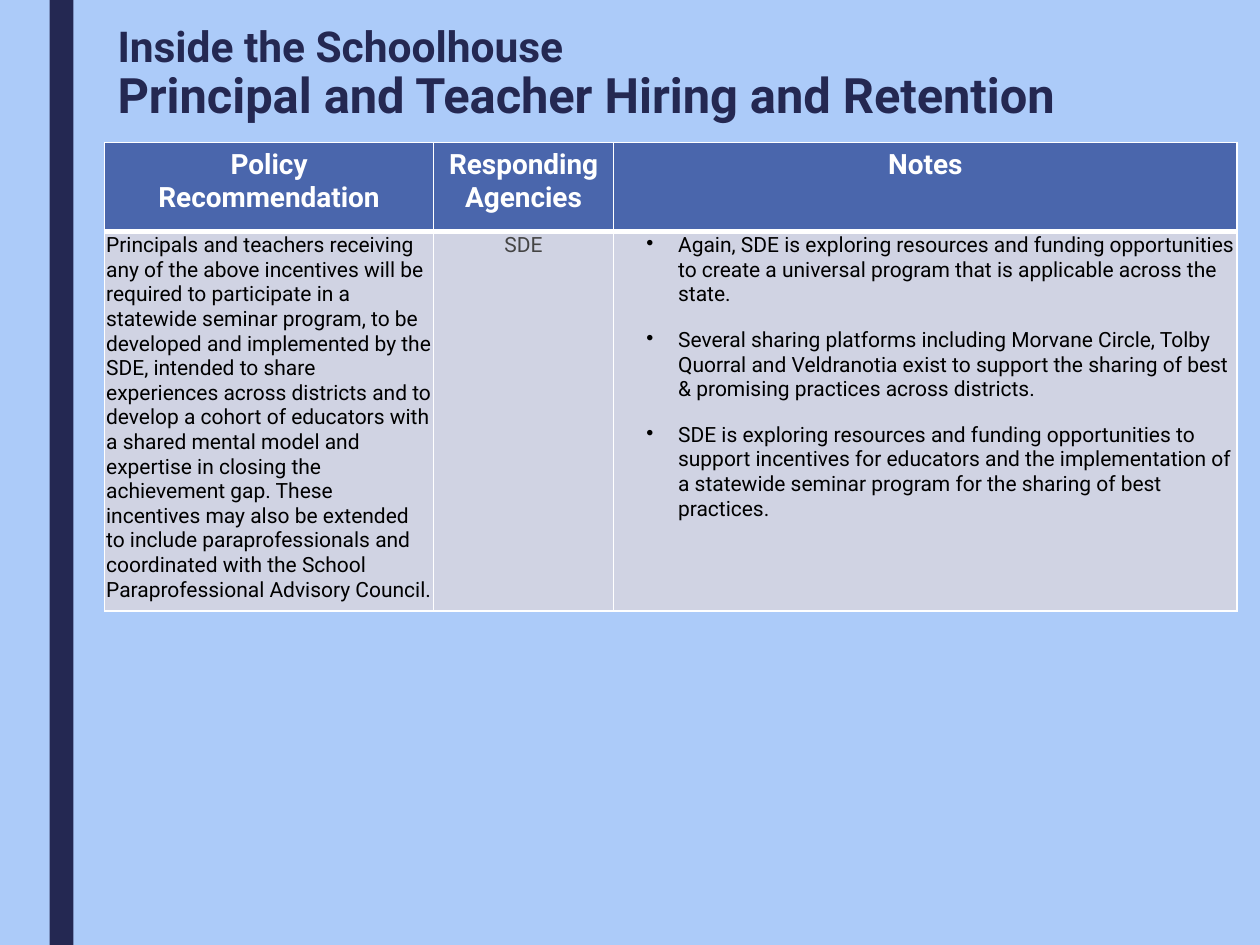
from lxml import etree
from pptx import Presentation
from pptx.dml.color import RGBColor
from pptx.enum.shapes import MSO_SHAPE
from pptx.enum.text import PP_ALIGN
from pptx.oxml.ns import qn
from pptx.util import Cm, Pt

RECTANGLE = MSO_SHAPE.RECTANGLE
LEFT, CENTER = PP_ALIGN.LEFT, PP_ALIGN.CENTER

FONT = "Roboto"
COLORS = {
    "background": "ACCBF9",
    "navy": "242852",
    "header": "4A66AC",
    "body": "D0D3E3",
    "white": "FFFFFF",
    "black": "000000",
    "gray": "444444",
}

TITLE_LINES = [
    ("Inside the Schoolhouse", 24.3),
    ("Principal and Teacher Hiring and Retention", 27.9),
]
HEADINGS = ["Policy Recommendation", "Responding Agencies", "Notes"]
RECOMMENDATION = (
    "Principals and teachers receiving any of the above incentives will be required to "
    "participate in a statewide seminar program, to be developed and implemented by the SDE, "
    "intended to share experiences across districts and to develop a cohort of educators with "
    "a shared mental model and expertise in closing the achievement gap. These incentives may "
    "also be extended to include paraprofessionals and coordinated with the School "
    "Paraprofessional Advisory Council."
)
AGENCY = "SDE"
NOTES = [
    "Again, SDE is exploring resources and funding opportunities to create a universal "
    "program that is applicable across the state.",
    "Several sharing platforms including Morvane Circle, Tolby Quorral and Veldranotia exist "
    "to support the sharing of best & promising practices across districts.",
    "SDE is exploring resources and funding opportunities to support incentives for educators "
    "and the implementation of a statewide seminar program for the sharing of best practices.",
]
# Paragraphs, alignment, text colour, bulleted
BODY_CELLS = [
    ([RECOMMENDATION], LEFT, "black", False),
    ([AGENCY], CENTER, "gray", False),
    (NOTES, LEFT, "black", True),
]
COLUMN_WIDTHS = [6.63, 3.63, 12.57]
ROW_HEIGHTS = [1.8, 6.25]


def rgb(name):
    return RGBColor.from_string(COLORS[name])


def write_paragraphs(frame, lines, size, color, bold=False, align=LEFT):
    frame.text = "\n".join(lines)
    for paragraph in frame.paragraphs:
        paragraph.alignment = align
        for run in paragraph.runs:
            run.font.name = FONT
            run.font.size = Pt(size)
            run.font.bold = bold
            run.font.color.rgb = rgb(color)


def add_bullet(paragraph):
    paragraph.space_after = Pt(12)
    properties = paragraph._p.get_or_add_pPr()
    properties.set("marL", str(Cm(1.27)))
    properties.set("indent", str(-Cm(0.64)))
    etree.SubElement(properties, qn("a:buChar"), char="•")


def style_cell(cell, fill, bottom_width=1):
    """Fill the cell and give it white borders."""
    cell.fill.solid()
    cell.fill.fore_color.rgb = rgb(fill)
    properties = cell._tc.get_or_add_tcPr()
    widths = {"a:lnL": 1, "a:lnR": 1, "a:lnT": 1, "a:lnB": bottom_width}
    for position, (tag, width) in enumerate(widths.items()):
        line = etree.Element(qn(tag), w=str(Pt(width)))
        solid = etree.SubElement(line, qn("a:solidFill"))
        etree.SubElement(solid, qn("a:srgbClr"), val=COLORS["white"])
        properties.insert(position, line)


def add_side_bar(slide, height):
    bar = slide.shapes.add_shape(RECTANGLE, Cm(1), 0, Cm(0.48), height)
    bar.shadow.inherit = False
    bar.fill.solid()
    bar.fill.fore_color.rgb = rgb("navy")
    bar.line.fill.background()


def add_title(slide):
    title = slide.shapes.add_textbox(Cm(2.12), Cm(0.4), Cm(22.17), Cm(3.28)).text_frame
    title.word_wrap = True
    write_paragraphs(title, [line for line, _ in TITLE_LINES], 24.3, "navy", bold=True)
    for paragraph, (_, size) in zip(title.paragraphs, TITLE_LINES):
        paragraph.line_spacing = 0.89
        paragraph.runs[0].font.size = Pt(size)


def add_policy_table(slide):
    table = slide.shapes.add_table(
        len(ROW_HEIGHTS), len(COLUMN_WIDTHS), Cm(2.11), Cm(2.87),
        Cm(sum(COLUMN_WIDTHS)), Cm(sum(ROW_HEIGHTS)),
    ).table
    for column, width in zip(table.columns, COLUMN_WIDTHS):
        column.width = Cm(width)
    for row, height in zip(table.rows, ROW_HEIGHTS):
        row.height = Cm(height)

    for index, heading in enumerate(HEADINGS):
        cell = table.cell(0, index)
        style_cell(cell, "header", bottom_width=3)
        write_paragraphs(cell.text_frame, [heading], 16, "white", bold=True, align=CENTER)

    for index, (lines, align, color, bulleted) in enumerate(BODY_CELLS):
        cell = table.cell(1, index)
        cell.margin_left = cell.margin_right = cell.margin_top = Cm(0.03)
        cell.margin_bottom = 0
        style_cell(cell, "body")
        # The header's thick rule is shared with the top of this row
        cell._tc.tcPr.find(qn("a:lnT")).set("w", str(Pt(3)))
        write_paragraphs(cell.text_frame, lines, 12, color, align=align)
        if bulleted:
            for paragraph in cell.text_frame.paragraphs:
                add_bullet(paragraph)


def main():
    presentation = Presentation()
    presentation.slide_width, presentation.slide_height = Cm(25.4), Cm(19.05)
    slide = presentation.slides.add_slide(presentation.slide_layouts[6])
    slide.background.fill.solid()
    slide.background.fill.fore_color.rgb = rgb("background")
    add_side_bar(slide, presentation.slide_height)
    add_title(slide)
    add_policy_table(slide)
    presentation.save("out.pptx")


if __name__ == "__main__":
    main()
